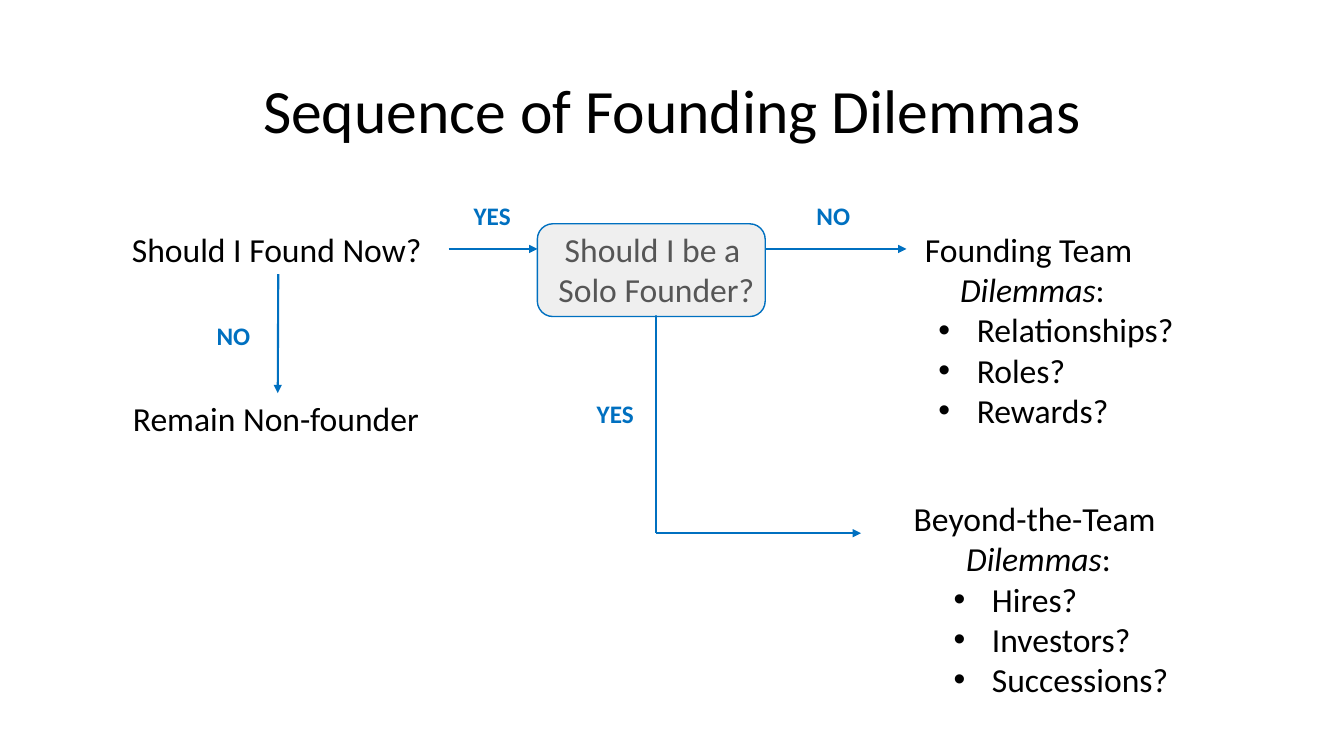
"""Build the slide on the sequence of founding dilemmas."""
from lxml import etree
from pptx import Presentation
from pptx.dml.color import RGBColor
from pptx.enum.shapes import MSO_CONNECTOR, MSO_SHAPE
from pptx.enum.text import MSO_ANCHOR, MSO_AUTO_SIZE, PP_ALIGN
from pptx.oxml.ns import qn
from pptx.util import Inches, Pt

CENTER, LEFT = PP_ALIGN.CENTER, PP_ALIGN.LEFT
MIDDLE = MSO_ANCHOR.MIDDLE
FIT_SHAPE = MSO_AUTO_SIZE.SHAPE_TO_FIT_TEXT
STRAIGHT = MSO_CONNECTOR.STRAIGHT
ROUNDED = MSO_SHAPE.ROUNDED_RECTANGLE
TOP_SIDE, BOTTOM_SIDE = 0, 2
FONT = "Calibri"
COLORS = {"text": "000000", "accent": "0070C0", "highlight": "D9D9D9"}


def style(paragraph, size, color="text", bold=False, align=LEFT):
    paragraph.alignment = align
    paragraph.font.name = FONT
    paragraph.font.size = Pt(size)
    paragraph.font.bold = bold
    paragraph.font.color.rgb = RGBColor.from_string(COLORS[color])


def add_text(position, text, size=24, color="text", bold=False, align=LEFT):
    box = slide.shapes.add_textbox(*[Inches(value) for value in position])
    box.text_frame.word_wrap = False
    box.text_frame.auto_size = FIT_SHAPE
    box.text_frame.paragraphs[0].text = text
    style(box.text_frame.paragraphs[0], size, color, bold, align)
    return box


presentation = Presentation()
presentation.slide_width = Inches(13.33)
presentation.slide_height = Inches(7.5)
slide = presentation.slides.add_slide(presentation.slide_layouts[5])

title = slide.shapes.title
title.left, title.top = Inches(0.92), Inches(0.4)
title.width, title.height = Inches(11.5), Inches(1.45)
title.text_frame.text = "Sequence of Founding Dilemmas"
title.text_frame.vertical_anchor = MIDDLE
style(title.text_frame.paragraphs[0], 44, align=CENTER)
title.text_frame.paragraphs[0].line_spacing = 0.9

found_now = add_text((1.21, 2.22, 3.1, 0.5), "Should I Found Now?")
non_founder = add_text((1.22, 3.9, 3.07, 0.5), "Remain Non-founder")
solo_founder = add_text((5.43, 2.22, 2.16, 0.91), "Should I be a \vSolo Founder?", align=CENTER)

dilemma_groups = [
    ((8.71, 2.22, 3.06, 2.12), "Founding Team", ["Relationships?", "Roles?", "Rewards?"]),
    ((8.86, 4.89, 2.88, 2.12), "Beyond-the-Team", ["Hires?", "Investors?", "Successions?"]),
]
for position, heading, dilemmas in dilemma_groups:
    box = add_text(position, heading + " \v", align=CENTER)
    heading_paragraph = box.text_frame.paragraphs[0]
    italic_run = heading_paragraph.add_run()
    italic_run.text = "Dilemmas"
    italic_run.font.italic = True
    heading_paragraph.add_run().text = ":"
    for dilemma in dilemmas:
        paragraph = box.text_frame.add_paragraph()
        paragraph.text = dilemma
        paragraph.level = 1
        style(paragraph, 24)
        properties = paragraph._p.get_or_add_pPr()
        properties.set("marL", str(Inches(0.88)))
        properties.set("indent", str(Inches(-0.38)))
        bullet_font = etree.Element(qn("a:buFont"), typeface="Arial")
        bullet = etree.Element(qn("a:buChar"), char="•")
        properties.insert(0, bullet_font)
        bullet_font.addnext(bullet)

answers = [
    ("YES", 4.6, 1.94),
    ("NO", 2.05, 3.13),
    ("NO", 8, 1.94),
    ("YES", 5.82, 3.9),
]
for answer, left, top in answers:
    width = 0.57 if answer == "YES" else 0.54
    add_text((left, top, width, 0.4), answer, 18, "accent", True)

links = [
    ((2.76, 2.73, 2.76, 3.9), True, found_now, non_founder),
    ((4.45, 2.47, 5.33, 2.47), True, None, None),
    ((7.59, 2.47, 8.99, 2.47), True, None, None),
    ((6.51, 3.13, 6.51, 5.29), False, solo_founder, None),
    ((6.51, 5.29, 8.54, 5.29), True, None, None),
]
for points, has_arrow, source, target in links:
    connector = slide.shapes.add_connector(STRAIGHT, *[Inches(value) for value in points])
    if source:
        connector.begin_connect(source, BOTTOM_SIDE)
    if target:
        connector.end_connect(target, TOP_SIDE)
    connector.line.color.rgb = RGBColor.from_string(COLORS["accent"])
    connector.line.width = Pt(1.5)
    if has_arrow:
        etree.SubElement(connector.line._get_or_add_ln(), qn("a:tailEnd"), type="triangle")
    etree.SubElement(connector._element.spPr, qn("a:effectLst"))

highlight = slide.shapes.add_shape(ROUNDED, Inches(5.33), Inches(2.22), Inches(2.26), Inches(0.92))
highlight.shadow.inherit = False
highlight.fill.solid()
highlight.fill.fore_color.rgb = RGBColor.from_string(COLORS["highlight"])
fill_color = highlight._element.spPr.find(qn("a:solidFill"))[0]
etree.SubElement(fill_color, qn("a:alpha"), val="40000")
highlight.line.color.rgb = RGBColor.from_string(COLORS["accent"])
highlight.line.width = Pt(1)

presentation.save("out.pptx")
